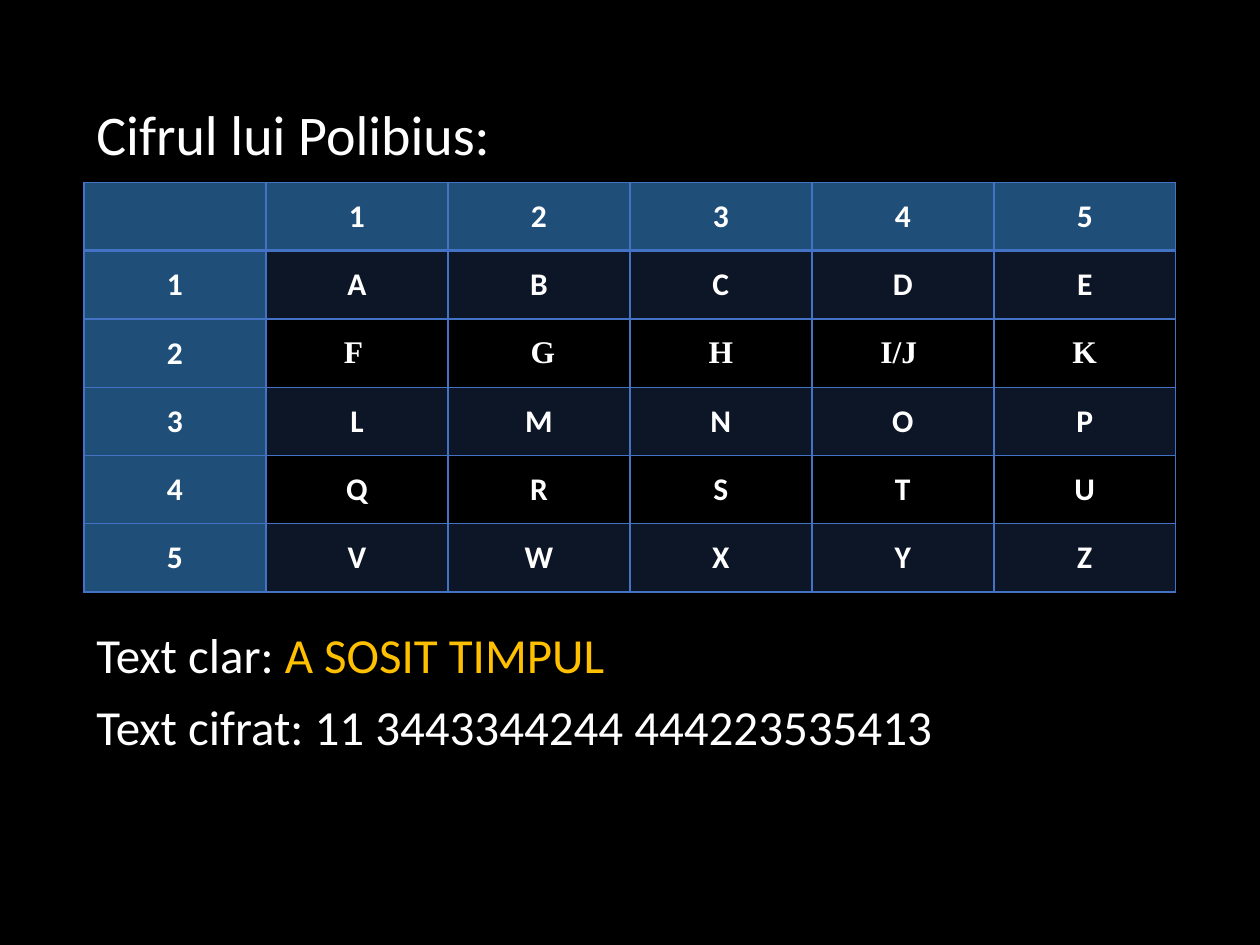
from lxml import etree
from pptx import Presentation
from pptx import util as u
from pptx.dml.color import RGBColor
from pptx.enum import text
from pptx.oxml import ns

BLACK = RGBColor(0, 0, 0)
WHITE = RGBColor(255, 255, 255)
GOLD = RGBColor(0xFF, 0xC0, 0x00)
NAVY = RGBColor(0x1F, 0x4E, 0x79)
BLUE = RGBColor(0x44, 0x72, 0xC4)
SANS = "Calibri"
SERIF = "Times New Roman"
LEFT = 48
GRID = [
    ["", "1", "2", "3", "4", "5"],
    ["1", "A", "B", "C", "D", "E"],
    ["2", "F ", " G", "H", "I/J ", "K"],
    ["3", "L", "M", "N", "O", "P"],
    ["4", "Q", "R", "S", "T", "U"],
    ["5", "V", "W", "X", "Y", "Z"],
]


class Deck:
    def __init__(self, wide, high):
        self.file = Presentation()
        self.file.slide_width = u.Pt(wide)
        self.file.slide_height = u.Pt(high)
        self.page = self.file.slides.add_slide(self.file.slide_layouts[6])
        back = self.page.background.fill
        back.solid()
        back.fore_color.rgb = BLACK

    def style(self, run, size, color=WHITE, face=SANS, bold=False):
        run.font.size = u.Pt(size)
        run.font.name = face
        run.font.bold = bold
        run.font.color.rgb = color

    def label(self, top, wide, high, size, parts, space=1):
        box = self.page.shapes.add_textbox(
            u.Pt(LEFT), u.Pt(top), u.Pt(wide), u.Pt(high))
        frame = box.text_frame
        frame.word_wrap = True
        para = frame.paragraphs[0]
        para.line_spacing = space
        for words, color in parts:
            run = para.add_run()
            run.text = words
            self.style(run, size, color)

    def border(self, cell, base):
        props = cell._tc.get_or_add_tcPr()
        for side in "LRTB":
            width = u.Pt(base if side == "B" else 1)
            line = etree.SubElement(props, ns.qn(f"a:ln{side}"), w=str(width))
            fill = etree.SubElement(line, ns.qn("a:solidFill"))
            etree.SubElement(fill, ns.qn("a:srgbClr"), val=str(BLUE))

    def paint(self, cell, row, col):
        if row and col and row % 2 == 0:
            cell.fill.background()
            return
        cell.fill.solid()
        if row == 0 or col == 0:
            cell.fill.fore_color.rgb = NAVY
            return
        cell.fill.fore_color.rgb = BLUE
        color = cell._tc.tcPr.find(ns.qn("a:solidFill"))[0]
        etree.SubElement(color, ns.qn("a:alpha"), val="20000")

    def table(self, top, wide, high, grid):
        rows, cols = len(grid), len(grid[0])
        table = self.page.shapes.add_table(
            rows, cols, u.Pt(LEFT), u.Pt(top),
            u.Pt(wide * cols), u.Pt(high * rows)).table
        table.first_row = table.horz_banding = False
        for row, words in enumerate(grid):
            for col, word in enumerate(words):
                cell = table.cell(row, col)
                cell.margin_left = cell.margin_right = u.Pt(5.4)
                cell.margin_top = cell.margin_bottom = u.Pt(2.7)
                cell.vertical_anchor = text.MSO_ANCHOR.MIDDLE
                self.border(cell, 1 if row else 2)
                self.paint(cell, row, col)
                cell.text_frame.text = word
                para = cell.text_frame.paragraphs[0]
                para.alignment = text.PP_ALIGN.CENTER
                face = SERIF if row == 2 and col else SANS
                for run in para.runs:
                    self.style(run, 18, face=face, bold=True)


def main():
    deck = Deck(720, 540)
    deck.label(57.6, 621, 40, 32, [("Cifrul lui Polibius:", WHITE)], 0.9)
    deck.table(104.4, 104, 39, GRID)
    deck.label(353.5, 367, 41, 28,
               [("Text clar: ", WHITE), ("A SOSIT TIMPUL", GOLD)])
    deck.label(394.5, 586, 41, 28,
               [("Text cifrat: 11 3443344244 444223535413", WHITE)])
    deck.file.save("out.pptx")


if __name__ == "__main__":
    main()
